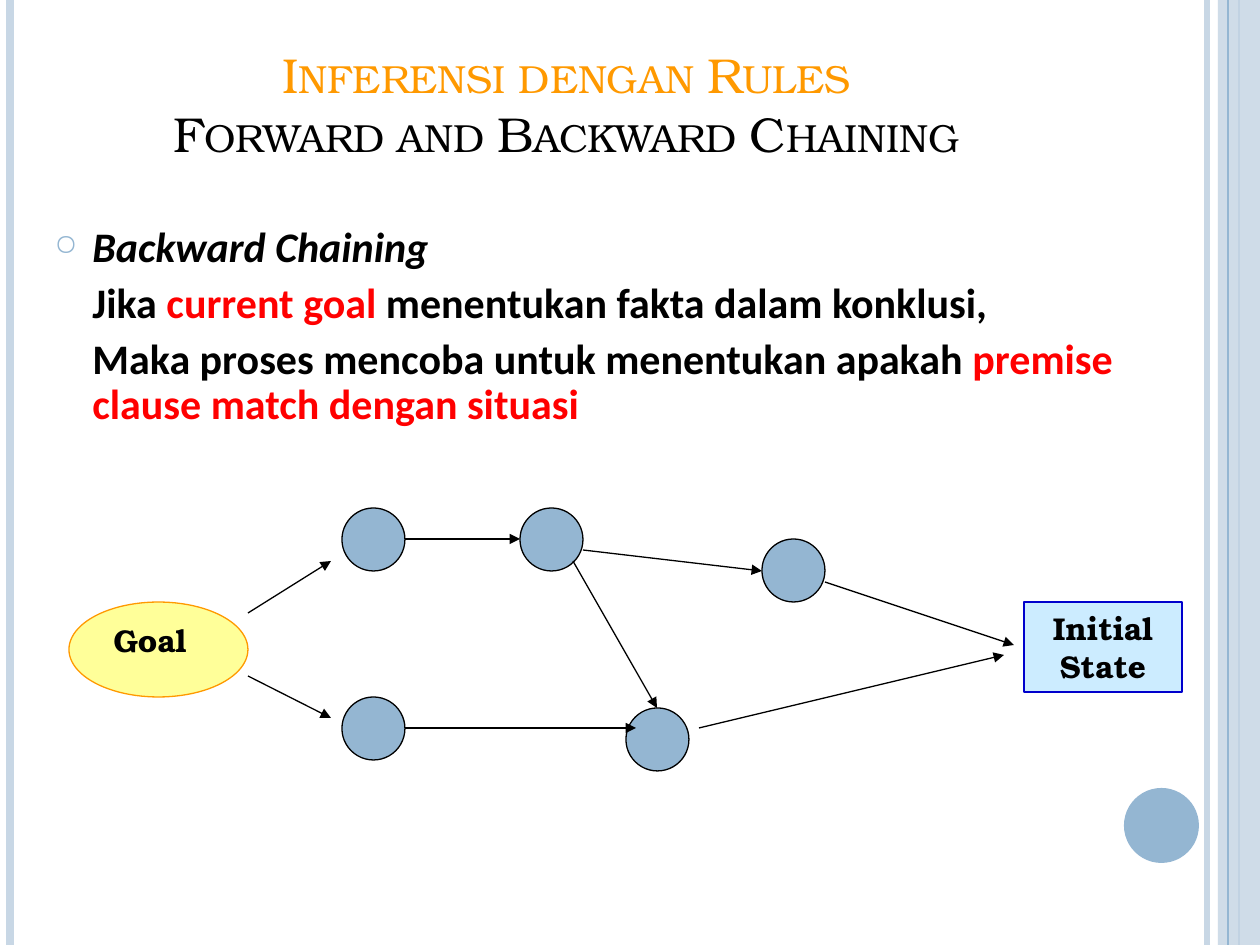
from pptx import Presentation
from pptx.dml.color import RGBColor
from pptx.enum.shapes import MSO_CONNECTOR, MSO_SHAPE
from pptx.enum.text import MSO_ANCHOR, PP_ALIGN
from pptx.oxml.ns import qn
from pptx.oxml.xmlchemy import OxmlElement
from pptx.util import Emu, Pt

PX = 914400 / 126
HEX = {"pale": "C8D7E5", "blue": "94B6D2", "black": "000000", "red": "FF0000",
       "orange": "FF9900", "yellow": "FFFF99", "sky": "CCECFF", "navy": "0000CC"}
RGB = {name: RGBColor.from_string(code) for name, code in HEX.items()}
SERIF = "TeX Gyre Bonum"

prs = Presentation()
prs.slide_width, prs.slide_height = Emu(round(1260 * PX)), Emu(round(945 * PX))
slide = prs.slides.add_slide(prs.slide_layouts[5])
shapes = slide.shapes


def add_line(ends, color, width, arrow=False):
    line = shapes.add_connector(MSO_CONNECTOR.STRAIGHT, *[Emu(round(v * PX)) for v in ends])
    line.line.color.rgb = RGB[color]
    line.line.width = Pt(width)
    props = line._element.spPr
    if arrow:
        tail = OxmlElement("a:tailEnd")
        tail.set("type", "triangle")
        props.find(qn("a:ln")).append(tail)
    props.append(OxmlElement("a:effectLst"))


def add_form(kind, box, fill, edge=None):
    form = shapes.add_shape(kind, *[Emu(round(v * PX)) for v in box])
    form.shadow.inherit = False
    form.fill.solid()
    form.fill.fore_color.rgb = RGB[fill]
    if edge:
        form.line.color.rgb = RGB[edge]
        form.line.width = Pt(0.75)
    else:
        form.line.fill.background()
    return form


# Side stripes and corner disc
for x, color, width in [(1207, "pale", 3), (10, "pale", 4.5), (1239, "blue", 1.5)]:
    add_line((x, 0, x, 945), color, width)
band = add_form(MSO_SHAPE.RECTANGLE, (1218, 0, 42, 945), "pale")
alpha = OxmlElement("a:alpha")
alpha.set("val", "87000")
band._element.spPr.find(".//" + qn("a:srgbClr")).append(alpha)
add_line((1228, 0, 1228, 945), "blue", 0.75)
add_form(MSO_SHAPE.OVAL, (1124, 788, 75, 75), "blue")

# Title
title = shapes.title
title.left, title.top, title.width, title.height = [
    Emu(round(v * PX)) for v in (107, 26, 919, 155)]
frame = title.text_frame
frame.text = "Inferensi dengan Rules\vForward and Backward Chaining"
frame.vertical_anchor = MSO_ANCHOR.MIDDLE
head = frame.paragraphs[0]
head.alignment = PP_ALIGN.CENTER
for run, color in zip(head.runs, ("orange", "black")):
    run.font.name, run.font.size = SERIF, Pt(28)
    run.font.color.rgb = RGB[color]
    run.font._element.set("cap", "small")

# Body text: a bulleted term and its indented explanation
body = [
    [("Backward Chaining", "black")],
    [("Jika ", "black"), ("current goal ", "red"),
     ("menentukan fakta dalam konklusi,", "black")],
    [("Maka proses mencoba untuk menentukan apakah ", "black"),
     ("premise clause match dengan situasi", "red")],
]
frame = shapes.add_textbox(*[Emu(round(v * PX)) for v in (42, 220, 1187, 252)]).text_frame
frame.word_wrap = True
for i, parts in enumerate(body):
    para = frame.paragraphs[0] if i == 0 else frame.add_paragraph()
    para.line_spacing = 0.9
    para.space_before = Pt(6)
    props = para._element.get_or_add_pPr()
    props.set("marL", str(round(38 * PX)))
    if i == 0:
        props.set("indent", str(-round(38 * PX)))
        tint = OxmlElement("a:buClr")
        code = OxmlElement("a:srgbClr")
        code.set("val", HEX["blue"])
        tint.append(code)
        size = OxmlElement("a:buSzPct")
        size.set("val", "70000")
        mark = OxmlElement("a:buChar")
        mark.set("char", "○")
        props.extend([tint, size, mark])
    for words, color in parts:
        run = para.add_run()
        run.text = words
        run.font.name, run.font.size = "Calibri", Pt(24)
        run.font.bold, run.font.italic = True, i == 0
        run.font.color.rgb = RGB[color]

# Search graph
for x, y in [(342, 697), (342, 508), (626, 708), (762, 539), (520, 508)]:
    add_form(MSO_SHAPE.OVAL, (x, y, 63, 63), "blue", "black")
add_form(MSO_SHAPE.OVAL, (69, 602, 179, 95), "yellow", "orange")
state = add_form(MSO_SHAPE.RECTANGLE, (1024, 602, 158, 90), "sky", "navy")
goal = shapes.add_textbox(*[Emu(round(v * PX)) for v in (101, 615, 105, 50)])

for form, words, align in [(state, "Initial State", PP_ALIGN.CENTER),
                           (goal, "Goal", PP_ALIGN.LEFT)]:
    frame = form.text_frame
    frame.word_wrap = True
    frame.text = words
    para = frame.paragraphs[0]
    para.alignment = align
    font = para.runs[0].font
    font.name, font.size, font.bold = SERIF, Pt(18), True
    font.color.rgb = RGB["black"]

for ends, width in [
    ((248, 613, 331, 561), 0.75),
    ((248, 676, 331, 718), 0.75),
    ((405, 539, 520, 539), 1.5),
    ((405, 728, 636, 728), 1.5),
    ((583, 550, 762, 571), 0.75),
    ((573, 561, 657, 708), 0.75),
    ((825, 582, 1014, 645), 0.75),
    ((699, 728, 1004, 655), 0.75),
]:
    add_line(ends, "black", width, arrow=True)

prs.save("out.pptx")
